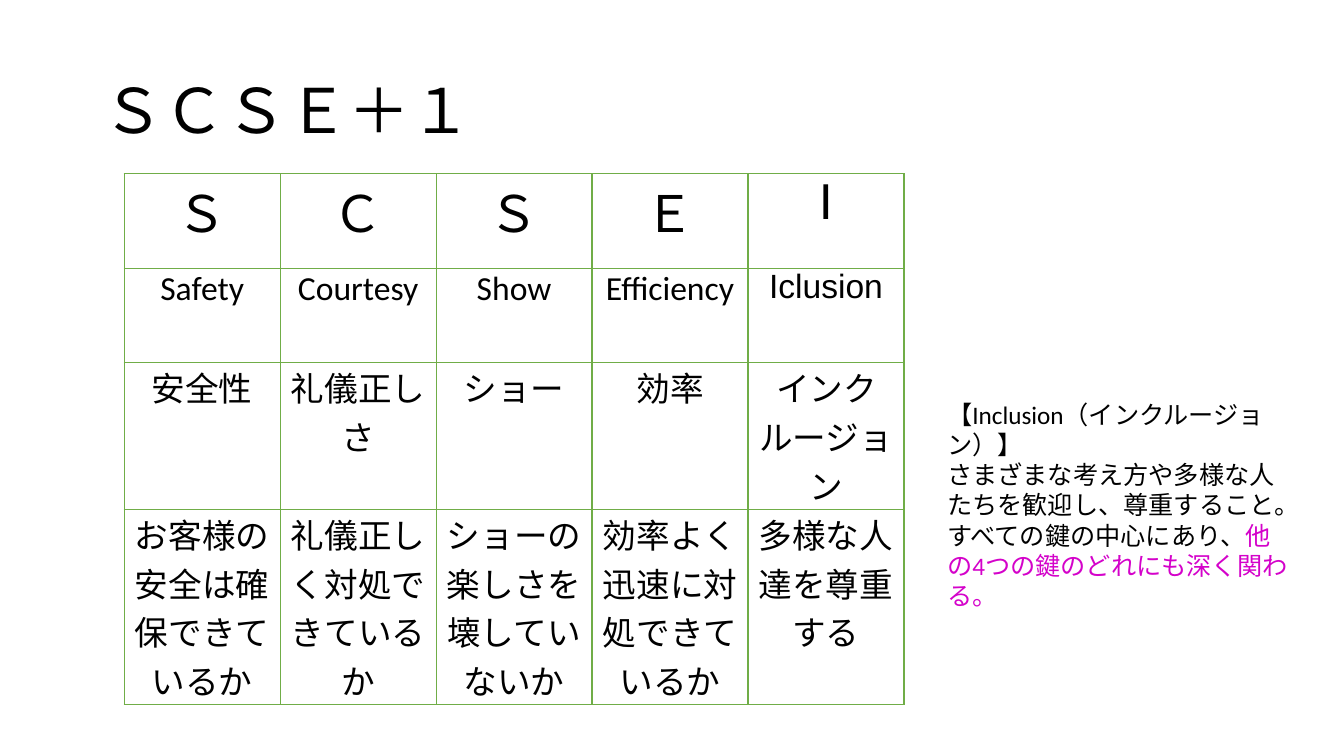
from lxml import etree
from pptx import Presentation
from pptx import util as u
from pptx.dml.color import RGBColor
from pptx.enum import text
from pptx.oxml.ns import qn

COLORS = {"ink": "000000", "grid": "70AD47", "accent": "D402CA"}

KEYS = [
    ["Ｓ", "Ｃ", "Ｓ", "Ｅ", "I"],
    ["Safety", "Courtesy", "Show", "Efficiency", "Iclusion"],
    ["安全性", "礼儀正しさ", "ショー", "効率", "インクルージョン"],
    ["お客様の安全は確保できているか", "礼儀正しく対処できているか",
     "ショーの楽しさを壊していないか", "効率よく迅速に対処できているか",
     "多様な人達を尊重する"],
]
ROW_HEIGHTS = [2.38, 2.38, 3.7, 4.92]
ROW_SIZES = [36, 24, 24, 24]
COLUMN_WIDTH = 3.93

INCLUSION_NOTE = [
    [("【Inclusion（インクルージョン）】", "ink")],
    [("さまざまな考え方や多様な人たちを歓迎し、尊重すること。"
      "すべての鍵の中心にあり、", "ink"),
     ("他の4つの鍵のどれにも深く関わる。", "accent")],
]


class SlideBuilder:
    body_font = "Calibri"
    inclusion_font = "Arial"

    def __init__(self, slide):
        self.slide = slide

    def style(self, paragraph, size, font=None):
        paragraph.font.size = u.Pt(size)
        paragraph.font.name = font or self.body_font
        paragraph.font.color.rgb = RGBColor.from_string(COLORS["ink"])

    def text_box(self, box, paragraphs, size, anchor=text.MSO_ANCHOR.TOP,
                 line_spacing=1.0):
        """Place paragraphs, each a list of (wording, colour name)."""
        frame = self.slide.shapes.add_textbox(*map(u.Cm, box)).text_frame
        frame.word_wrap = True
        frame.vertical_anchor = anchor
        for index, pieces in enumerate(paragraphs):
            paragraph = frame.paragraphs[0] if index == 0 else frame.add_paragraph()
            paragraph.line_spacing = line_spacing
            self.style(paragraph, size)
            for wording, color in pieces:
                run = paragraph.add_run()
                run.text = wording
                if color != "ink":
                    run.font.color.rgb = RGBColor.from_string(COLORS[color])

    def cell_borders(self, cell):
        properties = cell._tc.get_or_add_tcPr()
        for side in ("a:lnL", "a:lnR", "a:lnT", "a:lnB"):
            line = etree.SubElement(properties, qn(side), w=str(u.Pt(1)))
            fill = etree.SubElement(line, qn("a:solidFill"))
            etree.SubElement(fill, qn("a:srgbClr"), val=COLORS["grid"])

    def table(self, left, top, rows):
        columns = len(rows[0])
        table = self.slide.shapes.add_table(
            len(rows), columns, u.Cm(left), u.Cm(top),
            u.Cm(COLUMN_WIDTH * columns), u.Cm(sum(ROW_HEIGHTS))).table
        table.first_row = table.horz_banding = False
        for column in table.columns:
            column.width = u.Cm(COLUMN_WIDTH)
        for row, height, size, wordings in zip(
                table.rows, ROW_HEIGHTS, ROW_SIZES, rows):
            row.height = u.Cm(height)
            for index, (cell, wording) in enumerate(zip(row.cells, wordings)):
                cell.text = wording
                cell.margin_left = cell.margin_right = u.Cm(0.18)
                cell.margin_top = cell.margin_bottom = 0
                self.cell_borders(cell)
                cell.fill.background()
                paragraph = cell.text_frame.paragraphs[0]
                paragraph.alignment = text.PP_ALIGN.CENTER
                is_inclusion = index == columns - 1
                self.style(paragraph, size,
                           self.inclusion_font if is_inclusion else None)


def main():
    deck = Presentation()
    deck.slide_width, deck.slide_height = u.Cm(33.87), u.Cm(19.05)
    builder = SlideBuilder(deck.slides.add_slide(deck.slide_layouts[6]))
    builder.text_box((2.33, 1.01, 29.21, 3.68), [[("ＳＣＳＥ＋１", "ink")]], 44,
                     text.MSO_ANCHOR.MIDDLE, 0.9)
    builder.table(3.13, 4.38, KEYS)
    builder.text_box((23.62, 9.93, 9.27, 5.64), INCLUSION_NOTE, 18)
    deck.save("out.pptx")


if __name__ == "__main__":
    main()
